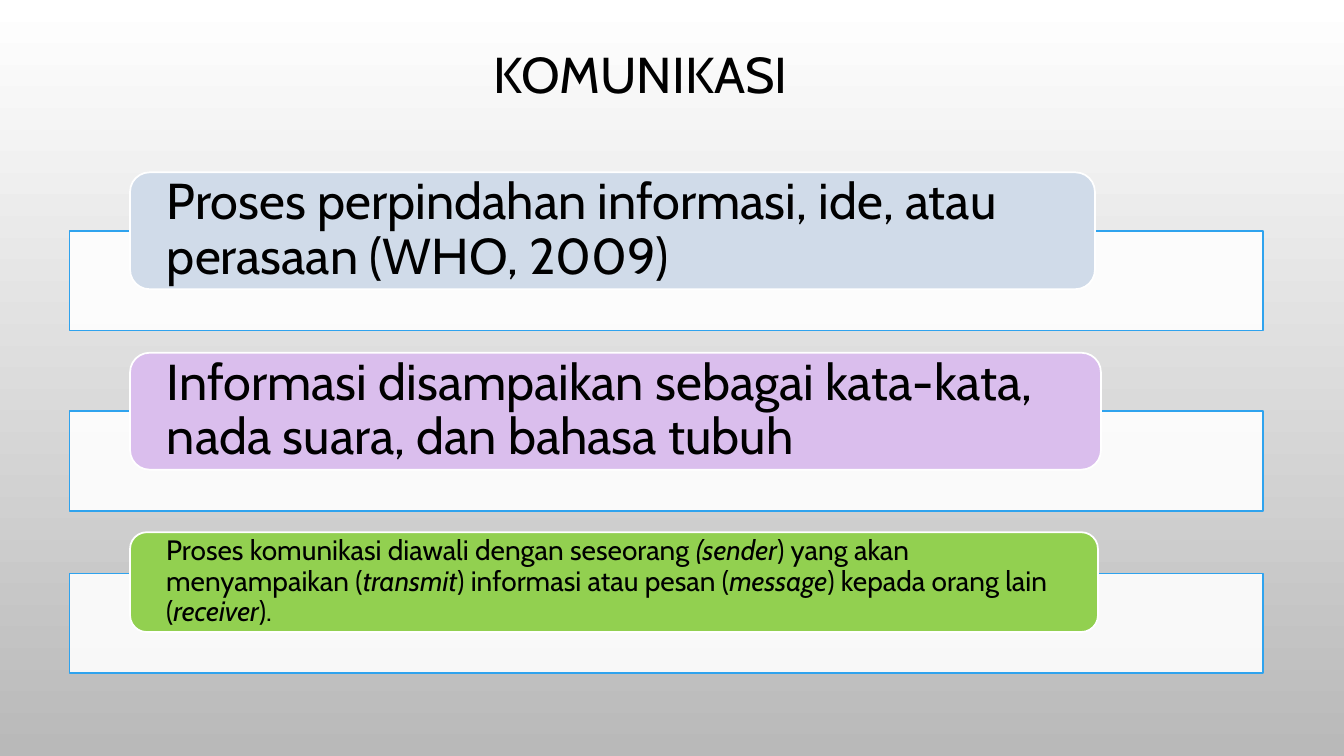
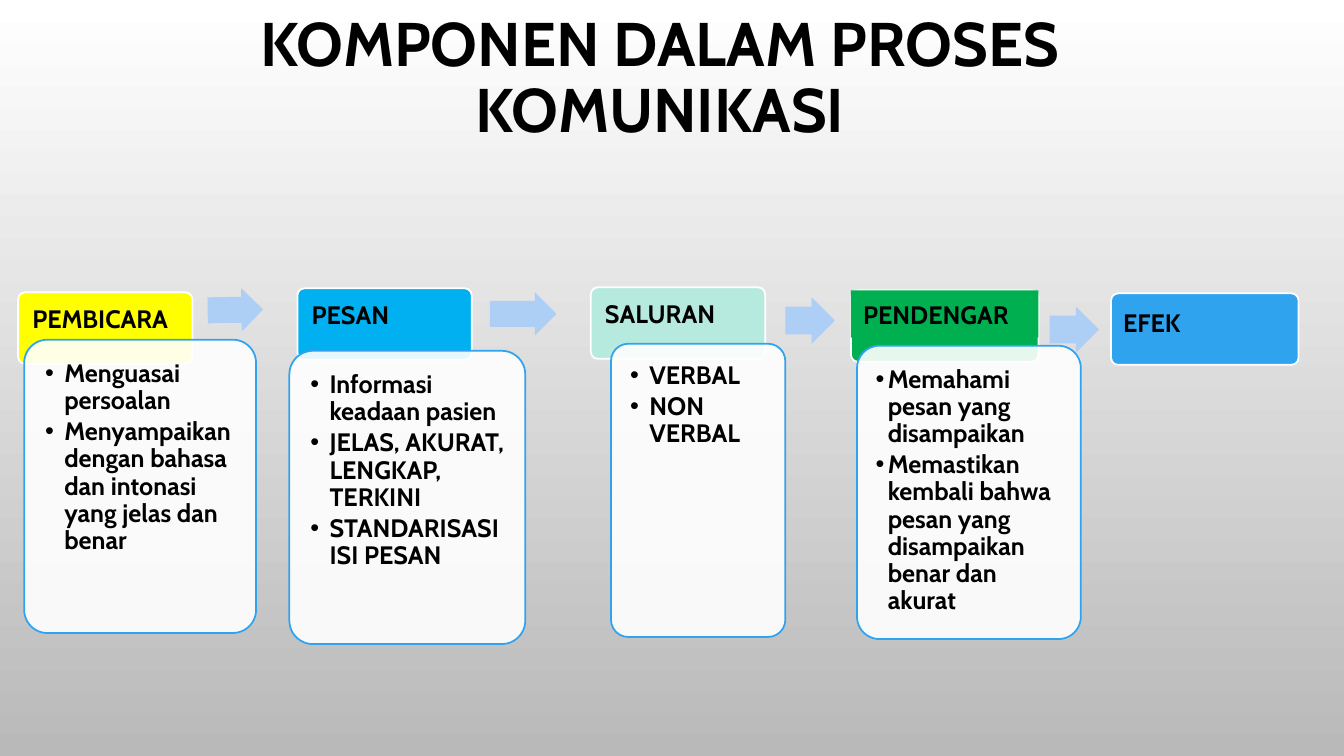
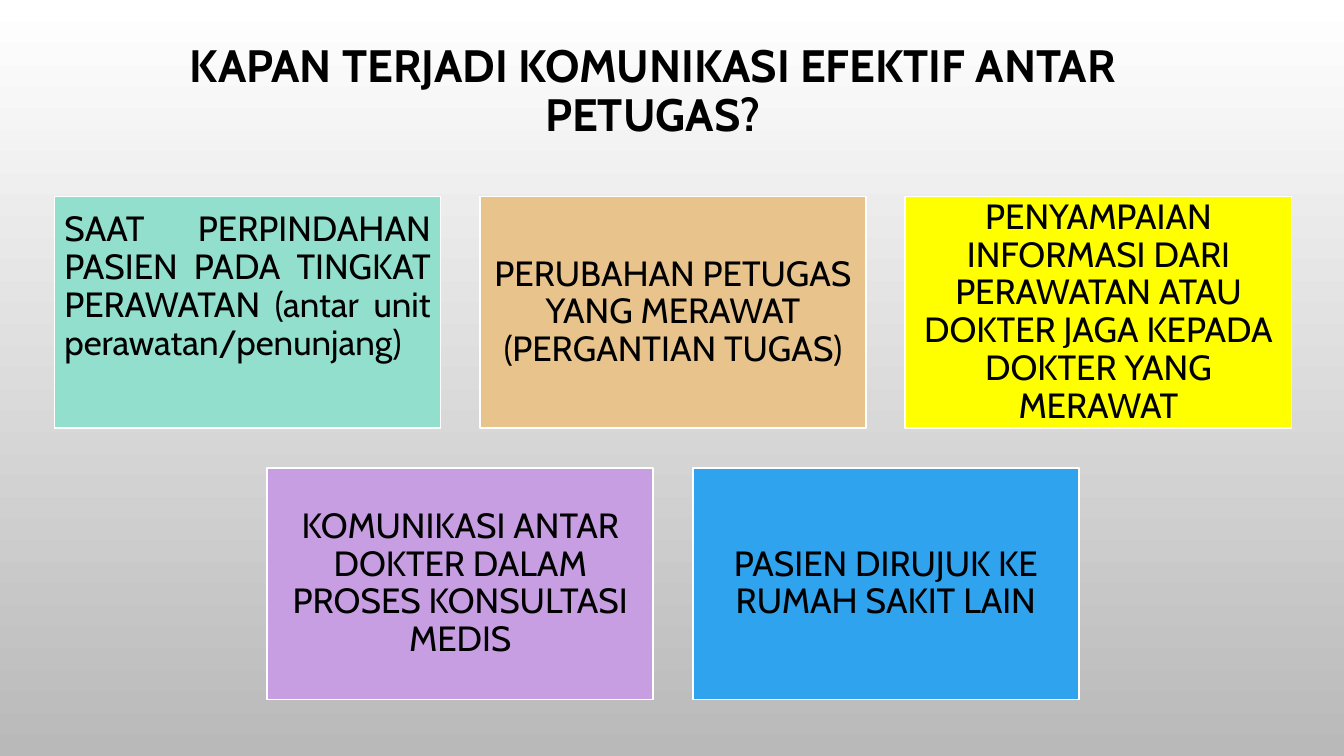
"""Build three slides on communication between health workers."""
from lxml import etree
from pptx import Presentation
from pptx.dml.color import RGBColor
from pptx.enum.shapes import MSO_SHAPE
from pptx.enum.text import MSO_ANCHOR, MSO_AUTO_SIZE, PP_ALIGN
from pptx.oxml.ns import qn
from pptx.util import Inches, Pt

RECTANGLE = MSO_SHAPE.RECTANGLE
ROUNDED = MSO_SHAPE.ROUNDED_RECTANGLE
ARROW = MSO_SHAPE.RIGHT_ARROW
TOP, MIDDLE = MSO_ANCHOR.TOP, MSO_ANCHOR.MIDDLE
LEFT, CENTER, JUSTIFY = PP_ALIGN.LEFT, PP_ALIGN.CENTER, PP_ALIGN.JUSTIFY

FONT = "Cabin"
BLACK, WHITE, GRAY = "000000", "FFFFFF", "B9B9B9"
BLUE, PALE_BLUE, GREEN, YELLOW = "2FA3EE", "ADCEF5", "00B050", "FFFF00"
TITLES = [
    ("KOMUNIKASI", (0.69, 0.29, 11.33, 0.95), 36, False),
    ("KOMPONEN DALAM PROSES KOMUNIKASI", (0.88, 0.21, 11.33, 1.16), 44, True),
    ("KAPAN TERJADI KOMUNIKASI EFEKTIF ANTAR PETUGAS?", (0.81, 0.36, 11.33, 1.12), 32.4, True),
]


def add_box(slide, kind, area, fill, line=None, opacity=100, adjustments=()):
    """Add a filled preset shape at area (left, top, width, height in inches)."""
    shape = slide.shapes.add_shape(kind, *map(Inches, area))
    shape.shadow.inherit = False
    for index, value in enumerate(adjustments):
        shape.adjustments[index] = value
    shape.fill.solid()
    shape.fill.fore_color.rgb = RGBColor.from_string(fill)
    if opacity < 100:
        color = shape.fill._xPr.find(qn("a:solidFill"))[0]
        etree.SubElement(color, qn("a:alpha"), val=str(opacity * 1000))
    if line:
        shape.line.color.rgb = RGBColor.from_string(line)
        shape.line.width = Pt(1.25)
    else:
        shape.line.fill.background()
    return shape


def write(shape, text, size, bold=False, align=LEFT, anchor=MIDDLE, insets=None, bullet_indent=0):
    """Write one paragraph per line of text, with italics between asterisks."""
    frame = shape.text_frame
    frame.word_wrap = True
    frame.auto_size = MSO_AUTO_SIZE.NONE
    frame.vertical_anchor = anchor
    if insets:
        frame.margin_left, frame.margin_top, frame.margin_right, frame.margin_bottom = map(Inches, insets)
    for index, line in enumerate(text.split("\n")):
        paragraph = frame.add_paragraph() if index else frame.paragraphs[0]
        if bullet_indent:
            properties = paragraph._p.get_or_add_pPr()
            properties.set("marL", str(Inches(bullet_indent)))
            properties.set("indent", str(-Inches(bullet_indent)))
            etree.SubElement(properties, qn("a:buFont"), typeface="Arial")
            etree.SubElement(properties, qn("a:buChar"), char="•")
            paragraph.space_after = Pt(size * 0.15)
        paragraph.alignment = align
        paragraph.line_spacing = 0.9
        for part, content in enumerate(line.split("*")):
            run = paragraph.add_run()
            run.text = content
            run.font.name = FONT
            run.font.size = Pt(size)
            run.font.bold = bold
            run.font.italic = part % 2 == 1
            run.font.color.rgb = RGBColor.from_string(BLACK)


presentation = Presentation()
presentation.slide_width = Inches(13.33)
presentation.slide_height = Inches(7.5)

background = presentation.slide_master.background.fill
background.gradient()
background.gradient_angle = 270
for stop, color in zip(background.gradient_stops, (WHITE, GRAY)):
    stop.color.rgb = RGBColor.from_string(color)

slides = []
for text, area, size, bold in TITLES:
    slide = presentation.slides.add_slide(presentation.slide_layouts[5])
    title = slide.shapes.title
    title.left, title.top, title.width, title.height = map(Inches, area)
    write(title, text, size, bold=bold, align=CENTER)
    slides.append(slide)
definition_slide, component_slide, occasion_slide = slides

definitions = [
    (2.29, 1.71, 9.57, 1.16, "D0DBE9", 36,
     "Proses perpindahan informasi, ide, atau perasaan (WHO, 2009)"),
    (4.08, 3.5, 9.63, 1.16, "DABEED", 36,
     "Informasi disampaikan sebagai kata-kata, nada suara, dan bahasa tubuh"),
    (5.69, 5.28, 9.6, 0.99, "92D050", 20,
     "Proses komunikasi diawali dengan seseorang *(sender*) yang akan menyampaikan "
     "(*transmit*) informasi atau pesan (*message*) kepada orang lain (*receiver*)."),
]
for bar_top, top, width, height, color, size, text in definitions:
    add_box(definition_slide, RECTANGLE, (0.69, bar_top, 11.84, 0.99), WHITE, BLUE, opacity=90)
    label = add_box(definition_slide, ROUNDED, (1.29, top, width, height), color, WHITE)
    write(label, text, size, insets=(0.31, 0, 0.31, 0))

arrows = [
    ((2.06, 2.86, 0.55, 0.43), 359.1),
    ((4.86, 2.9, 0.66, 0.43), 359.9),
    ((7.79, 2.95, 0.49, 0.46), 0),
    ((10.41, 3.04, 0.49, 0.46), 0),
]
for area, rotation in arrows:
    arrow = add_box(component_slide, ARROW, area, PALE_BLUE, adjustments=(0.6, 0.5))
    arrow.rotation = rotation

components = [
    ("PEMBICARA", (0.18, 2.9, 1.73, 0.71), YELLOW, 0.12, (0.24, 3.37, 2.3, 2.91), 0.14, 0.19,
     "Menguasai persoalan\nMenyampaikan dengan bahasa dan intonasi yang jelas dan benar"),
    ("PESAN", (2.95, 2.86, 1.73, 0.71), "00B0F0", 0.12, (2.87, 3.48, 2.34, 2.91), 0.14, 0.19,
     "Informasi keadaan pasien\nJELAS, AKURAT, LENGKAP, TERKINI\nSTANDARISASI ISI PESAN"),
    ("SALURAN", (5.86, 2.85, 1.73, 0.71), "B7EADE", 0.12, (6.06, 3.41, 1.73, 2.91), 0.14, 0.19,
     "VERBAL\nNON VERBAL"),
    ("PENDENGAR", (8.44, 2.88, 1.86, 0.71), GREEN, 0.12, (8.5, 3.43, 2.22, 2.91), 0.12, 0.12,
     "Memahami pesan yang disampaikan\n"
     "Memastikan kembali bahwa pesan yang disampaikan benar dan akurat"),
    ("EFEK", (11.02, 2.91, 1.86, 0.71), BLUE, 0.15, None, 0, 0, ""),
]
for name, area, color, label_inset, card_area, card_inset, indent, points in components:
    label = add_box(component_slide, ROUNDED, area, color, WHITE, adjustments=(0.1,))
    side_inset = 0.12
    if name == "PENDENGAR":
        label = add_box(component_slide, RECTANGLE, (*area[:3], 0.47), color)
    elif name == "EFEK":
        side_inset = 0.1
    write(label, name, 18, bold=True, anchor=TOP, insets=(side_inset, label_inset, side_inset, 0.06))
    if card_area:
        card = add_box(component_slide, ROUNDED, card_area, WHITE, BLUE, opacity=90, adjustments=(0.1,))
        write(card, points, 18, bold=True, anchor=TOP, insets=(card_inset, 0.14, card_inset, 0.12),
              bullet_indent=indent)

tile_width, tile_height, gap = 3.83, 2.3, 0.39
occasion_rows = [
    (0.54, [
        ("SAAT PERPINDAHAN PASIEN PADA TINGKAT PERAWATAN (antar unit perawatan/penunjang)",
         "93DFCE", JUSTIFY, 0.6),
        ("PERUBAHAN PETUGAS YANG MERAWAT (PERGANTIAN TUGAS)", "E8C48C", CENTER, 0.1),
        ("PENYAMPAIAN INFORMASI DARI PERAWATAN ATAU DOKTER JAGA KEPADA DOKTER YANG MERAWAT",
         YELLOW, CENTER, 0.1),
    ]),
    (2.65, [
        ("KOMUNIKASI ANTAR DOKTER DALAM PROSES KONSULTASI MEDIS", "C89EE3", CENTER, 0.1),
        ("PASIEN DIRUJUK KE RUMAH SAKIT LAIN", BLUE, CENTER, 0.1),
    ]),
]
for row, (row_left, tiles) in enumerate(occasion_rows):
    top = 1.95 + row * (tile_height + gap)
    for column, (text, color, align, bottom_inset) in enumerate(tiles):
        left = row_left + column * (tile_width + gap)
        tile = add_box(occasion_slide, RECTANGLE, (left, top, tile_width, tile_height), color, WHITE)
        write(tile, text, 25, align=align, insets=(0.1, 0.1, 0.1, bottom_inset))

presentation.save("out.pptx")
